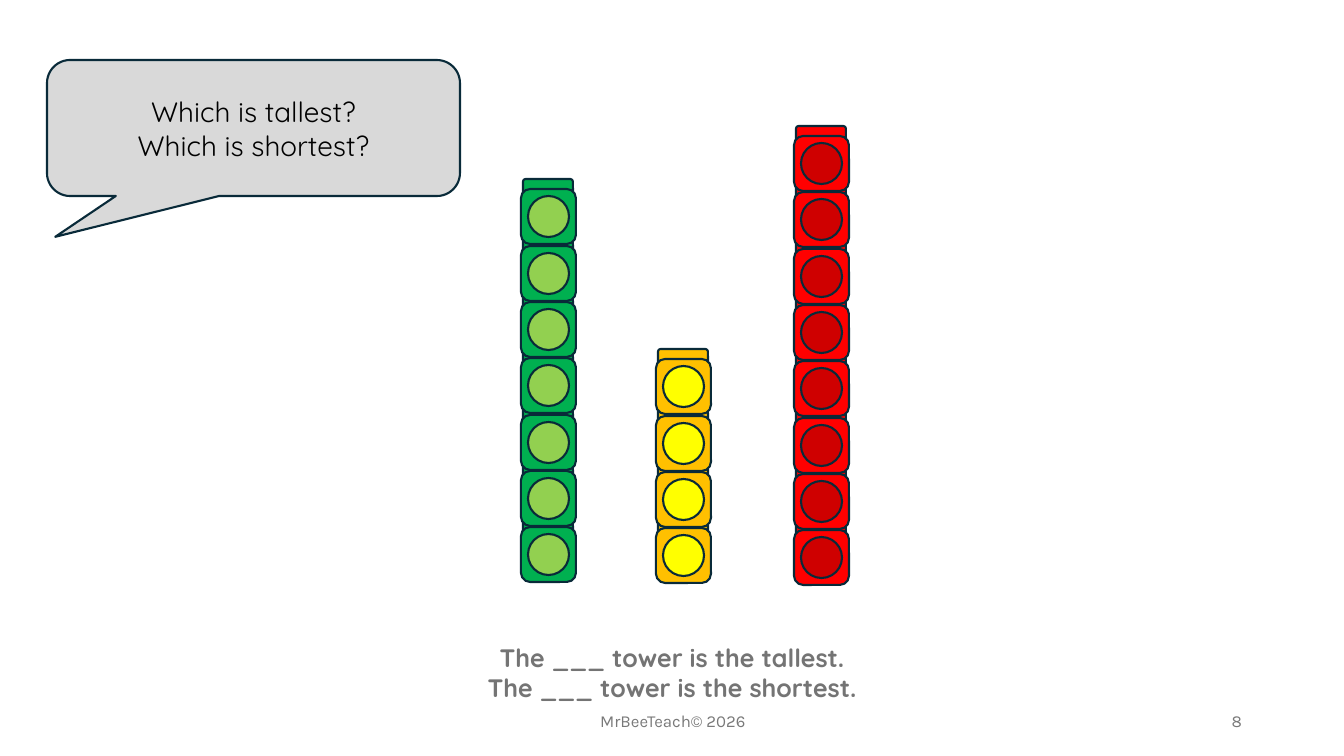
"""Build the slide that compares the heights of three cube towers."""
from lxml.etree import SubElement
from pptx import Presentation
from pptx.dml.color import RGBColor
from pptx.enum.shapes import MSO_SHAPE as SHAPE
from pptx.enum.text import MSO_ANCHOR as ANCHOR, MSO_AUTO_SIZE as AUTOSIZE, PP_ALIGN as ALIGN
from pptx.oxml.ns import qn
from pptx.util import Pt

EMU_PER_PX = 914400 / 100.8
COLORS = {
    "outline": "092A39", "bubble": "D9D9D9", "question": "000000",
    "sentence": "747474", "footer": "797979",
    "green": "00B050", "lime": "92D050",
    "amber": "FFC000", "yellow": "FFFF00",
    "red": "FF0000", "crimson": "CC0000",
}


def add_part(parent, kind, box, fill):
    part = parent.add_shape(kind, *[round(n * EMU_PER_PX) for n in box])
    part.shadow.inherit = False
    part.fill.solid()
    part.fill.fore_color.rgb = RGBColor.from_string(COLORS[fill])
    part.line.color.rgb = RGBColor.from_string(COLORS["outline"])
    part.line.width = Pt(1.5)
    return part


def write_lines(frame, lines, color, align, font):
    frame.word_wrap = True
    for i, line in enumerate(lines):
        paragraph = frame.paragraphs[0] if i == 0 else frame.add_paragraph()
        paragraph.alignment = align
        run = paragraph.add_run()
        run.text = line
        run.font.color.rgb = RGBColor.from_string(COLORS[color])
        for name, value in font.items():
            setattr(run.font, name, value)


deck = Presentation()
deck.slide_width = round(1344 * EMU_PER_PX)
deck.slide_height = round(756 * EMU_PER_PX)
slide = deck.slides.add_slide(deck.slide_layouts[6])

footer_font = {"name": "Karla", "size": Pt(12)}
sentence_font = {"name": "Quicksand", "size": Pt(18), "bold": True}
captions = [
    ((446, 701, 454, 40), ["MrBeeTeach© 2026"], "footer", ALIGN.CENTER, footer_font,
     {"vertical_anchor": ANCHOR.MIDDLE}),
    ((950, 701, 302, 40), ["8"], "footer", ALIGN.RIGHT, footer_font,
     {"vertical_anchor": ANCHOR.MIDDLE}),
    ((336, 637, 672, 72),
     ["The ___ tower is the tallest.", "The ___ tower is the shortest."],
     "sentence", ALIGN.CENTER, sentence_font, {"auto_size": AUTOSIZE.SHAPE_TO_FIT_TEXT}),
]
for box, lines, color, align, font, layout in captions:
    caption = slide.shapes.add_textbox(*[round(n * EMU_PER_PX) for n in box]).text_frame
    write_lines(caption, lines, color, align, font)
    for name, value in layout.items():
        setattr(caption, name, value)

bubble = add_part(slide.shapes, SHAPE.ROUNDED_RECTANGULAR_CALLOUT, (47, 60, 413, 136), "bubble")
for i, value in enumerate((-0.48, 0.8, 0.17)):
    bubble.adjustments[i] = value
bubble.text_frame.vertical_anchor = ANCHOR.MIDDLE
write_lines(bubble.text_frame, ["Which is tallest?", "Which is shortest?"], "question",
            ALIGN.CENTER, {"name": "Quicksand", "size": Pt(20)})

towers = [
    (521, 517, 7, "green", "lime", 100),
    (656, 518, 4, "amber", "yellow", 100),
    (794, 520, 8, "red", "crimson", 93),
]
for left, base, height, cube_color, dot_color, opacity in towers:
    for level in range(height):
        top = base - 169 * level // 3
        cube = slide.shapes.add_group_shape().shapes
        add_part(cube, SHAPE.ROUNDED_RECTANGLE, (left + 2, top, 50, 17), cube_color)
        add_part(cube, SHAPE.ROUNDED_RECTANGLE, (left, top + 10, 55, 55), cube_color)
        dot = add_part(cube, SHAPE.OVAL, (left + 7, top + 17, 41, 41), dot_color)
        if opacity < 100:
            shade = dot.fill._xPr.find(qn("a:solidFill"))[0]
            SubElement(shade, qn("a:alpha"), val=str(opacity * 1000))

deck.save("out.pptx")
